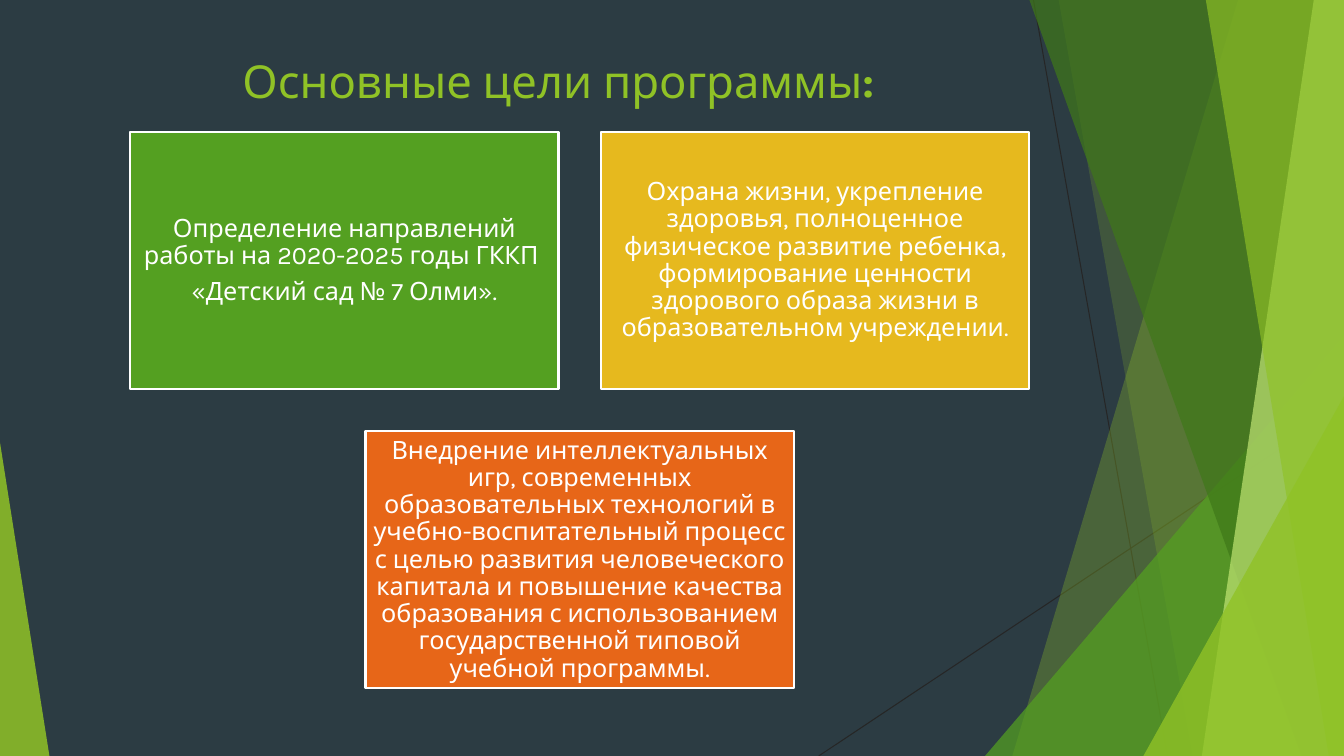
"""Builds the slide that lists the main goals of the kindergarten programme."""
from lxml import etree
from pptx import Presentation
from pptx.dml.color import RGBColor
from pptx.enum.shapes import MSO_CONNECTOR, MSO_SHAPE
from pptx.enum.text import MSO_ANCHOR, PP_ALIGN
from pptx.oxml.ns import qn
from pptx.util import Inches, Pt

STRAIGHT = MSO_CONNECTOR.STRAIGHT
TRIANGLE, RECTANGLE = MSO_SHAPE.ISOSCELES_TRIANGLE, MSO_SHAPE.RECTANGLE
TOP, MIDDLE, CENTER = MSO_ANCHOR.TOP, MSO_ANCHOR.MIDDLE, PP_ALIGN.CENTER

THEME = {
    "background": "2C3C43", "ray": "262626", "lime": "90C226", "green": "54A021",
    "forest": "3F7819", "pale": "C0E474", "yellow": "E6B91E", "orange": "E76618",
    "white": "FFFFFF", "font": "Karla", "title_size": Pt(32.4), "card_size": Pt(18),
}
WIDTH, HEIGHT = 13.33, 7.5


def color(name):
    """Return the theme colour with this name."""
    return RGBColor.from_string(THEME[name])


def paint(shape, name, opacity):
    """Fill a backdrop shape with a see-through colour and no outline."""
    shape.shadow.inherit = False
    shape.fill.solid()
    shape.fill.fore_color.rgb = color(name)
    tint = shape._element.spPr.find(".//" + qn("a:srgbClr"))
    etree.SubElement(tint, qn("a:alpha"), val=str(opacity * 1000))
    shape.line.fill.background()


presentation = Presentation()
presentation.slide_width, presentation.slide_height = Inches(WIDTH), Inches(HEIGHT)
slide = presentation.slides.add_slide(presentation.slide_layouts[5])
slide.background.fill.solid()
slide.background.fill.fore_color.rgb = color("background")
shapes = slide.shapes

for start_x, start_y, end_x in [(10.25, 0, 11.58), (WIDTH, 4.03, 8.12)]:
    ray = shapes.add_connector(
        STRAIGHT, Inches(start_x), Inches(start_y), Inches(end_x), Inches(HEIGHT))
    ray.line.color.rgb = color("ray")
    ray.line.width = Pt(0.75)
    etree.SubElement(ray._element.spPr, qn("a:effectLst"))

BACKDROP = [
    ("band", (12.28, 10.04), "lime", 30),
    ("band", (10.5, 11.83), "lime", 20),
    ("triangle", (9.77, 3.33, WIDTH, 1), "green", 72),
    ("band", (10.21, 12.91), "forest", 70),
    ("band", (13.03, 11.92), "pale", 70),
    ("band", (11.96, 13.18), "lime", 65),
    ("triangle", (11.34, 3.93, WIDTH, 1), "lime", 80),
    ("triangle", (0, 4.39, 0.49, 0), "lime", 85),
]
for kind, place, name, opacity in BACKDROP:
    if kind == "band":
        top_x, bottom_x = place
        builder = shapes.build_freeform(Inches(top_x), 0)
        builder.add_line_segments([
            (Inches(WIDTH), 0), (Inches(WIDTH), Inches(HEIGHT)),
            (Inches(bottom_x), Inches(HEIGHT))])
        shape = builder.convert_to_shape()
    else:
        left, top, right, apex = place
        shape = shapes.add_shape(
            TRIANGLE, Inches(left), Inches(top), Inches(right - left), Inches(HEIGHT - top))
        shape.adjustments[0] = apex
    paint(shape, name, opacity)

title = shapes.title
title_place = {"left": 0.84, "top": 0.48, "width": 9.4, "height": 0.83}
for attribute, value in title_place.items():
    setattr(title, attribute, Inches(value))
title.text_frame.vertical_anchor = TOP
title.text_frame.word_wrap = True
paragraph = title.text_frame.paragraphs[0]
paragraph.alignment = CENTER
for text, bold in [("Основные цели программы", False), (":", True)]:
    run = paragraph.add_run()
    run.text = text
    title_format = {"name": THEME["font"], "size": THEME["title_size"], "bold": bold}
    for attribute, value in title_format.items():
        setattr(run.font, attribute, value)
    run.font.color.rgb = color("lime")

CARD_WIDTH, CARD_HEIGHT, GAP = 4.25, 2.55, 0.42
GRID_LEFT, GRID_TOP = 1.29, 1.31
CARDS = [
    (0, 0, "green", ["Определение направлений работы на 2020-2025 годы ГККП ",
                     "«Детский сад № 7 Олми»."]),
    (1, 0, "yellow", ["Охрана жизни, укрепление здоровья, полноценное физическое развитие "
                      "ребенка, формирование ценности здорового образа жизни в "
                      "образовательном учреждении."]),
    (0.5, 1, "orange", ["Внедрение интеллектуальных игр, современных образовательных "
                        "технологий в учебно-воспитательный процесс с целью развития "
                        "человеческого капитала и повышение качества образования с "
                        "использованием государственной типовой учебной программы."]),
]
FRAME_FORMAT = {"word_wrap": True, "vertical_anchor": MIDDLE}
FRAME_FORMAT.update(
    {f"margin_{side}": Inches(0.07) for side in ("left", "top", "right", "bottom")})
PARAGRAPH_FORMAT = {"alignment": CENTER, "line_spacing": 0.9, "space_after": Pt(6.3)}
CARD_FONT = {"name": THEME["font"], "size": THEME["card_size"]}

for column, row, name, texts in CARDS:
    card = shapes.add_shape(
        RECTANGLE,
        Inches(GRID_LEFT + column * (CARD_WIDTH + GAP)),
        Inches(GRID_TOP + row * (CARD_HEIGHT + GAP)),
        Inches(CARD_WIDTH), Inches(CARD_HEIGHT))
    card.shadow.inherit = False
    card.fill.solid()
    card.fill.fore_color.rgb = color(name)
    card.line.color.rgb = color("white")
    card.line.width = Pt(1.5)
    frame = card.text_frame
    for attribute, value in FRAME_FORMAT.items():
        setattr(frame, attribute, value)
    frame.text = "\n".join(texts)
    for paragraph in frame.paragraphs:
        for attribute, value in PARAGRAPH_FORMAT.items():
            setattr(paragraph, attribute, value)
        font = paragraph.runs[0].font
        for attribute, value in CARD_FONT.items():
            setattr(font, attribute, value)
        font.color.rgb = color("white")

presentation.save("out.pptx")
